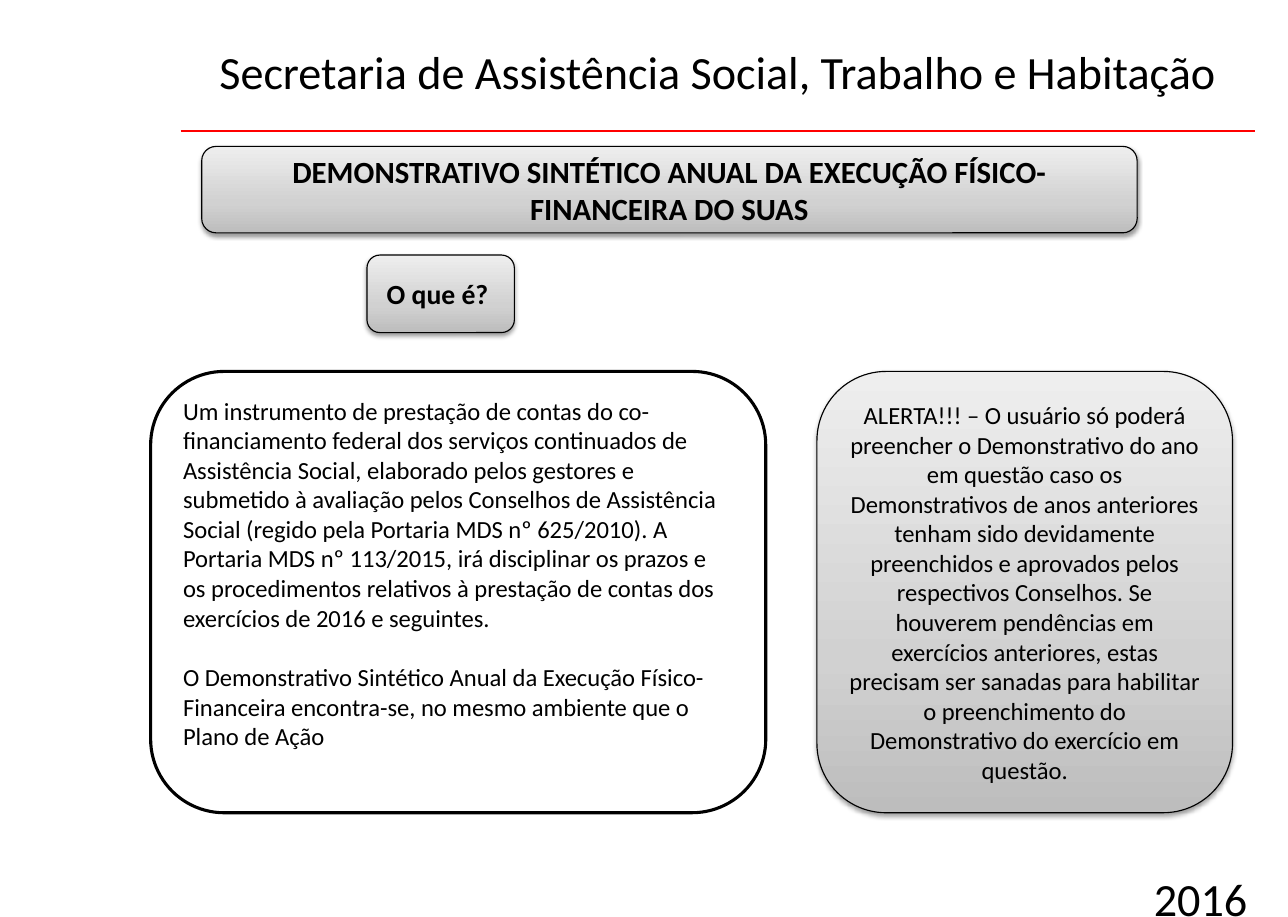
from pptx import Presentation
from pptx.util import Inches, Pt
from pptx.dml.color import RGBColor as Rgb
from pptx.enum.shapes import MSO_CONNECTOR as Link, MSO_SHAPE as Form
from pptx.enum.text import MSO_ANCHOR as Anchor, PP_ALIGN as Align
from pptx.oxml import parse_xml as parse
from pptx.oxml.ns import nsdecls

THEME = {
    "font": "Calibri", "ink": "000000", "rule": "FF0000",
    "grad": [(0, "BDBDBD"), (35, "D1D1D1"), (100, "EEEEEE")],
    "head": 30, "banner": 20, "ask": 18, "body": 16,
    "thin": 0.75, "mid": 1.5, "thick": 2,
}
NS = nsdecls("a")

deck = Presentation()
deck.slide_width, deck.slide_height = Inches(11.62), Inches(8.27)
slide = deck.slides.add_slide(deck.slide_layouts[6])
shapes = slide.shapes


def scale(x, y, w, h):
    wide, high = deck.slide_width / 100, deck.slide_height / 100
    return [int(n * u) for n, u in zip((x, y, w, h), (wide, high) * 2)]


def write(shape, *paras, size, bold=False, align=Align.LEFT,
          anchor=Anchor.MIDDLE, pad=(0.1, 0.05), foot=0, gap=0):
    frame = shape.text_frame
    frame.word_wrap = True
    frame.vertical_anchor = anchor
    frame.margin_left = frame.margin_right = Inches(pad[0])
    frame.margin_top = Inches(pad[1])
    frame.margin_bottom = Inches(pad[1] + foot)
    for i, text in enumerate(paras):
        para = frame.add_paragraph() if i else frame.paragraphs[0]
        para.alignment = align
        if i:
            para.space_before = Pt(gap)
        run = para.add_run()
        run.text = text
        run.font.name = THEME["font"]
        run.font.size = Pt(size)
        run.font.bold = bold
        run.font.color.rgb = Rgb.from_string(THEME["ink"])


x, y, w, h = scale(14.03, 14.27, 83.39, 0)
rule = shapes.add_connector(Link.STRAIGHT, x, y, x + w, y)
rule.line.color.rgb = Rgb.from_string(THEME["rule"])
rule.line.width = Pt(THEME["mid"])
rule._element.spPr.append(parse(f"<a:effectLst {NS}/>"))

for text, area in [
    ("Secretaria de Assistência Social, Trabalho e Habitação", (16.09, 3.99, 81.07, 7.5)),
    ("2016", (88.64, 94.2, 11.36, 5.8)),
]:
    label = shapes.add_textbox(*scale(*area))
    write(label, text, size=THEME["head"], anchor=Anchor.TOP, pad=(0.11, 0.06))

row, tall = 40.51, 48.13
center = {"align": Align.CENTER}
panels = [
    ((15.66, 15.96, 72.63, 9.43), True,
     ["DEMONSTRATIVO SINTÉTICO ANUAL DA EXECUÇÃO FÍSICO-FINANCEIRA DO SUAS"],
     {"size": THEME["banner"], "bold": True, **center}),
    ((28.49, 27.81, 11.45, 8.46), True, ["O que é? "],
     {"size": THEME["ask"], "bold": True, **center}),
    ((11.7, row, 47.76, tall), False,
     ["Um instrumento de prestação de contas do co-financiamento federal dos "
      "serviços continuados de Assistência Social, elaborado pelos gestores e "
      "submetido à avaliação pelos Conselhos de Assistência Social (regido pela "
      "Portaria MDS nº 625/2010). A Portaria MDS nº 113/2015, irá disciplinar os "
      "prazos e os procedimentos relativos à prestação de contas dos exercícios "
      "de 2016 e seguintes.",
      "O Demonstrativo Sintético Anual da Execução Físico-Financeira encontra-se, "
      "no mesmo ambiente que o Plano de Ação"],
     {"size": THEME["body"], "foot": 0.34, "gap": 19.5}),
    ((63.43, row, 32.27, tall), True,
     ["ALERTA!!! – O usuário só poderá preencher o Demonstrativo do ano em questão "
      "caso os Demonstrativos de anos anteriores tenham sido devidamente "
      "preenchidos e aprovados pelos respectivos Conselhos. Se houverem pendências "
      "em exercícios anteriores, estas precisam ser sanadas para habilitar o "
      "preenchimento do Demonstrativo do exercício em questão."],
     {"size": THEME["body"], **center}),
]

stops = "".join(
    f'<a:gs pos="{pos * 1000}"><a:srgbClr val="{tone}"/></a:gs>'
    for pos, tone in THEME["grad"])
grad = (f'<a:gradFill {NS} rotWithShape="1"><a:gsLst>{stops}</a:gsLst>'
        '<a:lin ang="16200000" scaled="0"/></a:gradFill>')
shade = (f'<a:outerShdw {NS} blurRad="{Pt(3.1)}" dist="{Pt(1.6)}" dir="5400000" '
         f'rotWithShape="0"><a:srgbClr val="{THEME["ink"]}">'
         '<a:alpha val="38000"/></a:srgbClr></a:outerShdw>')

for area, solid, paras, form in panels:
    panel = shapes.add_shape(Form.ROUNDED_RECTANGLE, *scale(*area))
    panel.shadow.inherit = False
    panel.line.color.rgb = Rgb.from_string(THEME["ink"])
    panel.line.width = Pt(THEME["thin" if solid else "thick"])
    if solid:
        props = panel._element.spPr
        props.insert(2, parse(grad))
        props.find("{*}effectLst").append(parse(shade))
    else:
        panel.fill.background()
    write(panel, *paras, **form)

deck.save("out.pptx")
